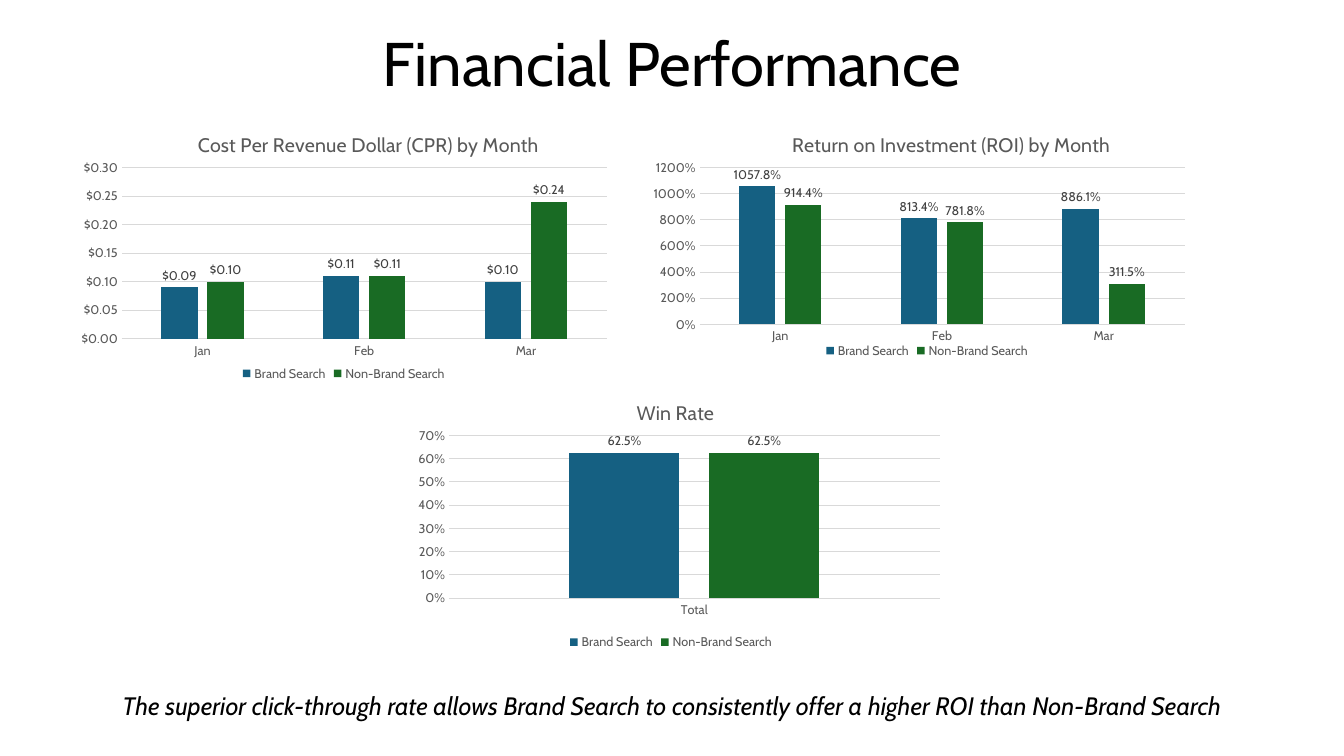
from dataclasses import dataclass

from lxml import etree
from pptx import Presentation
from pptx.chart.chart import Chart
from pptx.chart.data import CategoryChartData
from pptx.dml.color import RGBColor
from pptx.enum.chart import XL_CHART_TYPE, XL_LABEL_POSITION, XL_LEGEND_POSITION, XL_TICK_MARK
from pptx.enum.text import MSO_ANCHOR, PP_ALIGN
from pptx.oxml.ns import qn
from pptx.slide import Slide
from pptx.text.text import Font
from pptx.util import Inches, Pt

COLUMNS = XL_CHART_TYPE.COLUMN_CLUSTERED
OUTSIDE_END = XL_LABEL_POSITION.OUTSIDE_END
BOTTOM_LEGEND = XL_LEGEND_POSITION.BOTTOM
NO_TICK = XL_TICK_MARK.NONE
ANCHOR_TOP = MSO_ANCHOR.TOP
ANCHOR_BOTTOM = MSO_ANCHOR.BOTTOM
CENTER = PP_ALIGN.CENTER

FONT = "Cabin"
BLACK = RGBColor(0x00, 0x00, 0x00)
BLUE = RGBColor(0x15, 0x60, 0x82)
GREEN = RGBColor(0x19, 0x6B, 0x24)
GRAY = RGBColor(0x59, 0x59, 0x59)
DARK_GRAY = RGBColor(0x40, 0x40, 0x40)
GRID = RGBColor(0xD9, 0xD9, 0xD9)

CHART_WIDTH = 5.53
CHART_HEIGHT = 2.83
MONTHS = ("Jan", "Feb", "Mar")
SERIES = (("Brand Search", BLUE), ("Non-Brand Search", GREEN))


@dataclass(frozen=True)
class Metric:
    title: str
    left: float
    top: float
    categories: tuple[str, ...]
    values: tuple[tuple[float, ...], ...]
    axis_format: str
    label_format: str
    axis_max: float
    axis_step: float
    plot: tuple[float, ...]
    title_at: tuple[float, float]
    legend_at: tuple[float, float]


@dataclass(frozen=True)
class Caption:
    text: str
    left: float
    top: float
    width: float
    height: float
    size: int
    anchor: MSO_ANCHOR
    spacing: float = 1.0
    italic: bool = False


METRICS = (
    Metric("Cost Per Revenue Dollar (CPR) by Month", 0.71, 1.04, MONTHS,
           ((0.09, 0.11, 0.10), (0.10, 0.11, 0.24)),
           '"$"#,##0.00', '"$"#,##0.00', 0.3, 0.05,
           (0.09, 0.22, 0.87, 0.6), (0.22, 0.08), (0.3, 0.9)),
    Metric("Return on Investment (ROI) by Month", 6.44, 1.04, MONTHS,
           ((10.578, 8.134, 8.861), (9.144, 7.818, 3.115)),
           "0%", "0.0%", 12, 2,
           (0.09, 0.22, 0.87, 0.55), (0.25, 0.08), (0.31, 0.82)),
    Metric("Win Rate", 3.9, 3.67, ("Total",), ((0.625,), (0.625,)),
           "0%", "0.0%", 0.7, 0.1,
           (0.1, 0.23, 0.88, 0.57), (0.43, 0.09), (0.31, 0.92)),
)

CAPTIONS = (
    Caption("Financial Performance", 0.92, 0, 11.5, 1.04, 44, ANCHOR_BOTTOM, spacing=0.9),
    Caption("The superior click-through rate allows Brand Search to consistently offer "
            "a higher ROI than Non-Brand Search",
            0, 6.8, 13.33, 0.4, 18, ANCHOR_TOP, italic=True),
)


def style_font(font: Font, size: float, color: RGBColor) -> None:
    font.name = FONT
    font.size = Pt(size)
    font.bold = False
    font.color.rgb = color


def set_layout(parent: etree._Element, place: tuple[float, ...], inner: bool = False) -> None:
    for old in parent.findall(qn("c:layout")):
        parent.remove(old)
    layout = etree.Element(qn("c:layout"))
    manual = etree.SubElement(layout, qn("c:manualLayout"))
    if inner:
        etree.SubElement(manual, qn("c:layoutTarget"), val="inner")
    for mode in ("xMode", "yMode"):
        etree.SubElement(manual, qn(f"c:{mode}"), val="edge")
    for name, value in zip("xywh", place):
        etree.SubElement(manual, qn(f"c:{name}"), val=str(value))
    overlay = parent.find(qn("c:overlay"))
    if overlay is None:
        parent.insert(0, layout)
    else:
        overlay.addprevious(layout)


def style_axes(chart: Chart, metric: Metric) -> None:
    for axis in (chart.category_axis, chart.value_axis):
        axis.major_tick_mark = axis.minor_tick_mark = NO_TICK
        style_font(axis.tick_labels.font, 9, GRAY)
    val = chart.value_axis
    val.minimum_scale = 0
    val.maximum_scale = metric.axis_max
    val.major_unit = metric.axis_step
    val.tick_labels.number_format = metric.axis_format
    val.tick_labels.number_format_is_linked = False
    val.format.line.fill.background()
    for line in (chart.category_axis.format.line, val.major_gridlines.format.line):
        line.color.rgb = GRID
        line.width = Pt(0.75)


def add_metric(s: Slide, metric: Metric) -> None:
    data = CategoryChartData(number_format=metric.label_format)
    data.categories = metric.categories
    for (name, _), values in zip(SERIES, metric.values):
        data.add_series(name, values)
    chart = s.shapes.add_chart(COLUMNS, Inches(metric.left), Inches(metric.top),
                               Inches(CHART_WIDTH), Inches(CHART_HEIGHT), data).chart
    style_font(chart.font, 10, BLACK)
    style_axes(chart, metric)

    chart.has_title = True
    p = chart.chart_title.text_frame.paragraphs[0]
    p.text = metric.title
    style_font(p.font, 14, GRAY)

    chart.has_legend = True
    chart.legend.position = BOTTOM_LEGEND
    chart.legend.include_in_layout = False
    style_font(chart.legend.font, 9, GRAY)

    plot = chart.plots[0]
    plot.gap_width = 219
    plot.overlap = -27
    plot.vary_by_categories = False
    for series, (_, color) in zip(plot.series, SERIES):
        series.format.fill.solid()
        series.format.fill.fore_color.rgb = color
        labels = series.data_labels
        labels.show_value = True
        labels.position = OUTSIDE_END
        labels.number_format = metric.label_format
        labels.number_format_is_linked = False
        style_font(labels.font, 9, DARK_GRAY)

    root = chart.element
    set_layout(root.find(f".//{qn('c:plotArea')}"), metric.plot, inner=True)
    set_layout(root.find(f".//{qn('c:title')}"), metric.title_at)
    set_layout(root.find(f".//{qn('c:legend')}"), metric.legend_at)


def add_caption(s: Slide, caption: Caption) -> None:
    sp = s.shapes.add_textbox(Inches(caption.left), Inches(caption.top),
                              Inches(caption.width), Inches(caption.height))
    tf = sp.text_frame
    tf.word_wrap = True
    tf.vertical_anchor = caption.anchor
    p = tf.paragraphs[0]
    p.text = caption.text
    p.alignment = CENTER
    p.line_spacing = caption.spacing
    style_font(p.font, caption.size, BLACK)
    p.font.italic = caption.italic


def main() -> None:
    prs = Presentation()
    prs.slide_width = Inches(13.33)
    prs.slide_height = Inches(7.5)
    s = prs.slides.add_slide(prs.slide_layouts[6])
    for metric in METRICS:
        add_metric(s, metric)
    for caption in CAPTIONS:
        add_caption(s, caption)
    prs.save("out.pptx")


if __name__ == "__main__":
    main()
